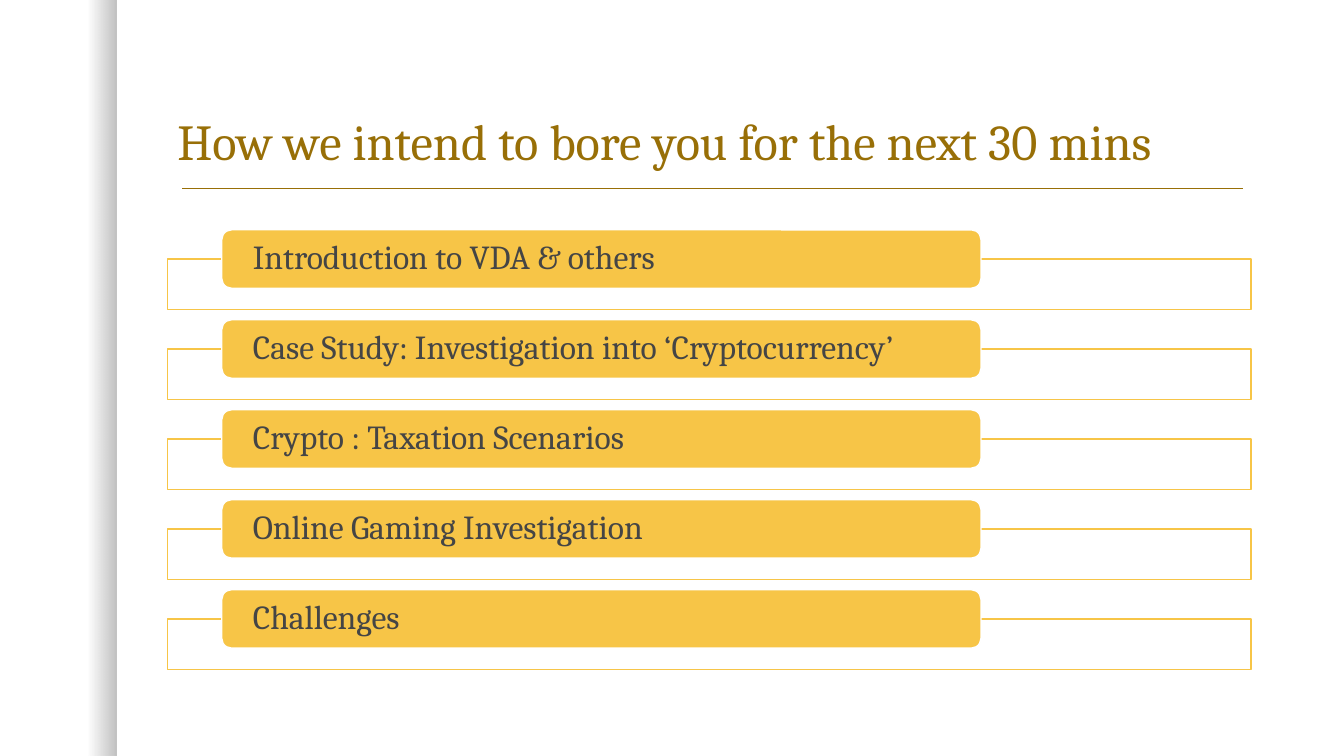
from lxml import etree
from pptx import Presentation
from pptx.dml.color import RGBColor
from pptx.enum import shapes, text
from pptx.oxml import ns
from pptx.util import Inches, Pt

GOLD, BROWN, GREY, WHITE = "F7C547", "986F07", "454545", "FFFFFF"


def rgb(code):
    return RGBColor.from_string(code)


def write(frame, words, size, color, side, edge):
    frame.text = words
    frame.word_wrap = True
    frame.margin_left = frame.margin_right = Inches(side)
    frame.margin_top = frame.margin_bottom = Inches(edge)
    par = frame.paragraphs[0]
    par.alignment = text.PP_ALIGN.LEFT
    par.line_spacing = 0.9
    font = par.runs[0].font
    font.name, font.size = "Cambria", Pt(size)
    font.color.rgb = rgb(color)


deck = Presentation()
deck.slide_width, deck.slide_height = Inches(13.33), Inches(7.5)
slide = deck.slides.add_slide(deck.slide_layouts[6])
parts = slide.shapes

# Shaded band on the left, clear to soft black
band = parts.add_shape(shapes.MSO_SHAPE.RECTANGLE, 0, 0, Inches(1.16), Inches(7.5))
band.shadow.inherit = False
band.line.fill.background()
band.fill.gradient()
band.fill.gradient_angle = 0
for stop, place in zip(band.fill.gradient_stops, (0.75, 1)):
    stop.color.rgb = rgb("000000")
    stop.position = place
for tone, alpha in zip(band.element.spPr.iter(ns.qn("a:srgbClr")), (0, 25)):
    etree.SubElement(tone, ns.qn("a:alpha")).set("val", str(alpha * 1000))

# Title and its rule
rule = parts.add_connector(shapes.MSO_CONNECTOR.STRAIGHT, Inches(1.81), Inches(1.87),
                           Inches(12.33), Inches(1.87))
rule.line.color.rgb = rgb(BROWN)
rule.line.width = Pt(1)
etree.SubElement(rule.element.spPr, ns.qn("a:effectLst"))
title = parts.add_textbox(Inches(1.66), Inches(0.42), Inches(10.75), Inches(1.33))
title.text_frame.vertical_anchor = text.MSO_ANCHOR.BOTTOM
write(title.text_frame, "How we intend to bore you for the next 30 mins", 36, BROWN, 0.1, 0.05)

# Agenda: an outlined frame behind each gold label
topics = [
    "Introduction to VDA & others",
    "Case Study: Investigation into ‘Cryptocurrency’",
    "Crypto : Taxation Scenarios",
    "Online Gaming Investigation",
    "Challenges",
]
for row, topic in enumerate(topics):
    top = 2.28 + row * 0.8925
    frame = parts.add_shape(shapes.MSO_SHAPE.RECTANGLE, Inches(1.66), Inches(top + 0.29),
                            Inches(10.75), Inches(0.5))
    label = parts.add_shape(shapes.MSO_SHAPE.ROUNDED_RECTANGLE, Inches(2.2), Inches(top),
                            Inches(7.53), Inches(0.58))
    for box, fill, line in ((frame, WHITE, GOLD), (label, GOLD, WHITE)):
        box.shadow.inherit = False
        box.fill.solid()
        box.fill.fore_color.rgb = rgb(fill)
        box.line.color.rgb = rgb(line)
        box.line.width = Pt(1)
    label.text_frame.vertical_anchor = text.MSO_ANCHOR.MIDDLE
    write(label.text_frame, topic, 24, GREY, 0.28, 0)

deck.save("out.pptx")
